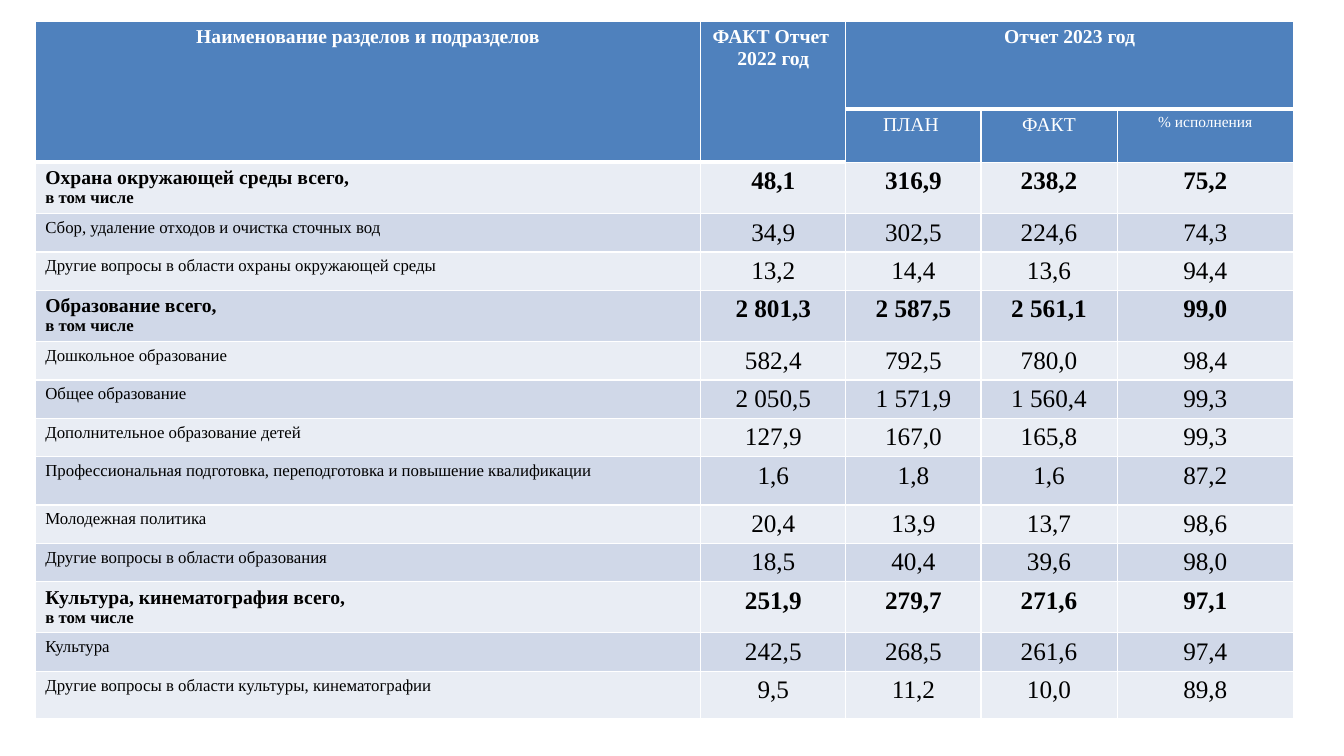
"""Build a slide with a table of budget execution by section."""
import lxml.etree
import pptx
import pptx.dml.color
import pptx.enum.text
import pptx.oxml.ns
import pptx.util

Inches = pptx.util.Inches
CENTER = pptx.enum.text.PP_ALIGN.CENTER
LEFT = pptx.enum.text.PP_ALIGN.LEFT

WHITE, BLACK, HEADER = "FFFFFF", "000000", "4F81BD"
BANDS = ("E9EDF4", "D0D8E8")
COLUMN_WIDTHS = (6.6, 1.44, 1.34, 1.35, 1.75)
HEADER_HEIGHTS = (0.87, 0.5)
TOTAL_HEIGHT, ITEM_HEIGHT = 0.51, 0.38
SPECIAL_HEIGHTS = {9: 0.48, 14: 0.47}
TOTAL_SUFFIX = " всего,"

BUDGET = (
    ("Охрана окружающей среды всего,", "48,1", "316,9", "238,2", "75,2"),
    ("Сбор, удаление отходов и очистка сточных вод", "34,9", "302,5", "224,6", "74,3"),
    ("Другие вопросы в области охраны окружающей среды", "13,2", "14,4", "13,6", "94,4"),
    ("Образование всего,", "2 801,3", "2 587,5", "2 561,1", "99,0"),
    ("Дошкольное образование", "582,4", "792,5", "780,0", "98,4"),
    ("Общее образование", "2 050,5", "1 571,9", "1 560,4", "99,3"),
    ("Дополнительное образование детей", "127,9", "167,0", "165,8", "99,3"),
    ("Профессиональная подготовка, переподготовка и повышение квалификации",
     "1,6", "1,8", "1,6", "87,2"),
    ("Молодежная политика", "20,4", "13,9", "13,7", "98,6"),
    ("Другие вопросы в области образования", "18,5", "40,4", "39,6", "98,0"),
    ("Культура, кинематография всего,", "251,9", "279,7", "271,6", "97,1"),
    ("Культура", "242,5", "268,5", "261,6", "97,4"),
    ("Другие вопросы в области культуры, кинематографии", "9,5", "11,2", "10,0", "89,8"),
)


def color(value):
    """Turn a hex string into a colour."""
    return pptx.dml.color.RGBColor.from_string(value)


def set_borders(cell, bottom_width):
    """Draw white lines around a cell."""
    properties = cell._tc.get_or_add_tcPr()
    widths = {"lnL": 1, "lnR": 1, "lnT": 1, "lnB": bottom_width}
    for tag, width in widths.items():
        line = lxml.etree.SubElement(
            properties, pptx.oxml.ns.qn(f"a:{tag}"), w=str(pptx.util.Pt(width)))
        fill = lxml.etree.SubElement(line, pptx.oxml.ns.qn("a:solidFill"))
        lxml.etree.SubElement(fill, pptx.oxml.ns.qn("a:srgbClr"), val=WHITE)


def style_cell(cell, fill, bottom_width=1):
    """Give a cell its borders and fill."""
    set_borders(cell, bottom_width)
    cell.fill.solid()
    cell.fill.fore_color.rgb = color(fill)


def write_cell(cell, lines, alignment, text_color, bold):
    """Write (text, size) lines as paragraphs of a cell."""
    for index, (text, size) in enumerate(lines):
        frame = cell.text_frame
        paragraph = frame.add_paragraph() if index else frame.paragraphs[0]
        paragraph.alignment = alignment
        run = paragraph.add_run()
        run.text = text
        format_values = {"name": "Times New Roman", "size": pptx.util.Pt(size), "bold": bold}
        for name, value in format_values.items():
            setattr(run.font, name, value)
        run.font.color.rgb = color(text_color)


def add_budget_table(slide, heights):
    """Add an empty table with its column widths and row heights."""
    shape = slide.shapes.add_table(
        len(heights), len(COLUMN_WIDTHS), Inches(0.35), Inches(0.21),
        Inches(sum(COLUMN_WIDTHS)), Inches(sum(heights)))
    table = shape.table
    for column, width in zip(table.columns, COLUMN_WIDTHS):
        column.width = Inches(width)
    for row, height in zip(table.rows, heights):
        row.height = Inches(height)
    return table


def fill_header(table):
    """Style, merge and label the two header rows."""
    for row in range(2):
        for column in range(len(COLUMN_WIDTHS)):
            thick = row == 0 or column < 2
            style_cell(table.cell(row, column), HEADER, 3 if thick else 1)
    for start, end in (((0, 0), (1, 0)), ((0, 1), (1, 1)), ((0, 2), (0, 4))):
        table.cell(*start).merge(table.cell(*end))
    titles = (
        (0, 0, [("Наименование разделов и подразделов", 14)]),
        (0, 1, [("ФАКТ Отчет ", 14), ("2022 год", 14)]),
        (0, 2, [("Отчет 2023 год", 14)]),
        (1, 2, [("ПЛАН ", 14)]),
        (1, 3, [("ФАКТ", 14)]),
        (1, 4, [("% исполнения", 11)]),
    )
    for row, column, lines in titles:
        write_cell(table.cell(row, column), lines, CENTER, WHITE, row == 0)


def fill_body(table):
    """Write the budget rows on alternating bands."""
    for index, (section, *values) in enumerate(BUDGET):
        row = index + len(HEADER_HEIGHTS)
        total = section.endswith(TOTAL_SUFFIX)
        lines = [(section, 14), ("в том числе", 12)] if total else [(section, 12)]
        for column in range(len(COLUMN_WIDTHS)):
            style_cell(table.cell(row, column), BANDS[index % 2])
        write_cell(table.cell(row, 0), lines, LEFT, BLACK, total)
        for column, value in enumerate(values, 1):
            write_cell(table.cell(row, column), [(value, 18)], CENTER, BLACK, total)


def row_heights():
    """List the heights of all rows."""
    heights = list(HEADER_HEIGHTS)
    for row, (section, *_) in enumerate(BUDGET, len(HEADER_HEIGHTS)):
        usual = TOTAL_HEIGHT if section.endswith(TOTAL_SUFFIX) else ITEM_HEIGHT
        heights.append(SPECIAL_HEIGHTS.get(row, usual))
    return heights


def main():
    """Build and save the presentation."""
    presentation = pptx.Presentation()
    presentation.slide_width = Inches(13.33)
    presentation.slide_height = Inches(7.5)
    slide = presentation.slides.add_slide(presentation.slide_layouts[6])
    table = add_budget_table(slide, row_heights())
    fill_header(table)
    fill_body(table)
    presentation.save("out.pptx")


if __name__ == "__main__":
    main()
